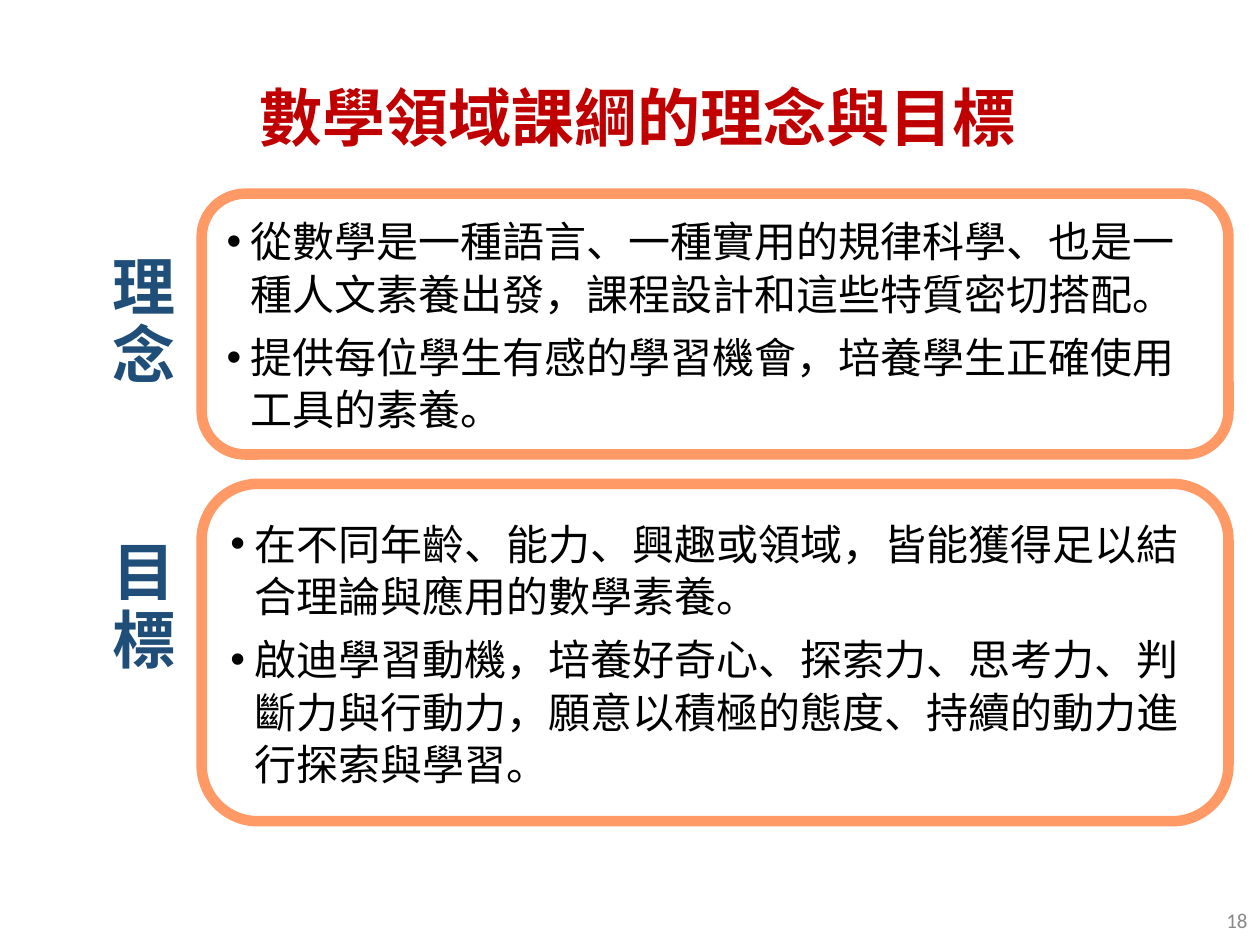
"""Build a slide on the rationale and goals of the mathematics curriculum."""
from dataclasses import dataclass

from lxml import etree
from pptx import Presentation, util as u
from pptx.dml.color import RGBColor
from pptx.enum import shapes, text
from pptx.oxml.ns import qn

WIDTH, HEIGHT = u.Inches(10), u.Inches(7.5)
RED = RGBColor(0xC0, 0x00, 0x00)
NAVY = RGBColor(0x1F, 0x4E, 0x79)
ORANGE = RGBColor(0xFF, 0x99, 0x66)
GREY = RGBColor(0x89, 0x89, 0x89)
BLACK = RGBColor(0, 0, 0)
WHITE = RGBColor(0xFF, 0xFF, 0xFF)
CJK = "Noto Sans CJK SC"
LABEL_X, LABEL_W, LABEL_H = 0.069, 0.091, 0.191
PANEL_X, PANEL_W = 0.16, 0.815


@dataclass
class Section:
    """A label beside a panel, with tops and height as shares of the slide."""
    label: str
    label_top: float
    top: float
    height: float
    points: list[str]


SECTIONS = [
    Section("理念", 0.247, 0.205, 0.276, [
        "從數學是一種語言、一種實用的規律科學、也是一種人文素養出發，課程設計和這些特質密切搭配。",
        "提供每位學生有感的學習機會，培養學生正確使用工具的素養。"]),
    Section("目標", 0.549, 0.512, 0.357, [
        "在不同年齡、能力、興趣或領域，皆能獲得足以結合理論與應用的數學素養。",
        "啟迪學習動機，培養好奇心、探索力、思考力、判斷力與行動力，願意以積極的態度、持續的動力進行探索與學習。"]),
]


def area(x: float, y: float, w: float, h: float) -> tuple[int, int, int, int]:
    """Turn shares of the slide into lengths."""
    return int(x * WIDTH), int(y * HEIGHT), int(w * WIDTH), int(h * HEIGHT)


def style(p, size: float, color: RGBColor, bold: bool = False, name: str = CJK) -> None:
    """Format every run of a paragraph."""
    for r in p.runs:
        r.font.size, r.font.bold, r.font.name = u.Pt(size), bold, name
        r.font.color.rgb = color
        etree.SubElement(r.font._element, qn("a:ea")).set("typeface", name)


def add_bullet(p) -> None:
    """Give a paragraph a hanging round bullet."""
    pPr = p._p.get_or_add_pPr()
    pPr.set("marL", str(u.Inches(0.19)))
    pPr.set("indent", str(-u.Inches(0.19)))
    etree.SubElement(pPr, qn("a:buFont")).set("typeface", "Arial")
    etree.SubElement(pPr, qn("a:buChar")).set("char", "•")


def add_panel(s, section: Section) -> None:
    """Draw an outlined panel with its bullet points."""
    sp = s.shapes.add_shape(shapes.MSO_SHAPE.FLOWCHART_ALTERNATE_PROCESS,
                            *area(PANEL_X, section.top, PANEL_W, section.height))
    sp.shadow.inherit = False
    sp.fill.solid()
    sp.fill.fore_color.rgb = WHITE
    sp.line.color.rgb = ORANGE
    sp.line.width = u.Pt(6)
    tf = sp.text_frame
    tf.word_wrap = True
    tf.vertical_anchor = text.MSO_ANCHOR.MIDDLE
    for i, point in enumerate(section.points):
        p = tf.add_paragraph() if i else tf.paragraphs[0]
        p.text = point
        add_bullet(p)
        p.alignment = text.PP_ALIGN.LEFT
        p.line_spacing = u.Pt(30)
        p.space_before = u.Pt(6 if i else 0)
        style(p, 24, BLACK)


def add_text(s, words: str, box: tuple[int, int, int, int], align: text.PP_ALIGN):
    """Add a wrapped, vertically centred text box and return its frame."""
    tf = s.shapes.add_textbox(*box).text_frame
    tf.word_wrap = True
    tf.vertical_anchor = text.MSO_ANCHOR.MIDDLE
    tf.text = words
    tf.paragraphs[0].alignment = align
    return tf


def add_label(s, section: Section) -> None:
    """Stack the section name beside its panel."""
    tf = add_text(s, section.label, area(LABEL_X, section.label_top, LABEL_W, LABEL_H),
                  text.PP_ALIGN.CENTER)
    tf.margin_left = tf.margin_right = u.Inches(0.15)
    tf.margin_top = tf.margin_bottom = u.Inches(0.07)
    tf.paragraphs[0].line_spacing = 0.9
    style(tf.paragraphs[0], 36, NAVY, True)


def add_title(s, words: str) -> None:
    """Place and format the title placeholder."""
    sp = s.shapes.title
    sp.left, sp.top, sp.width, sp.height = area(0.08, 0.027, 0.852, 0.193)
    tf = sp.text_frame
    tf.text = words
    tf.vertical_anchor = text.MSO_ANCHOR.MIDDLE
    tf.paragraphs[0].alignment = text.PP_ALIGN.CENTER
    style(tf.paragraphs[0], 36, RED, True)


def main() -> None:
    """Build and save the slide."""
    prs = Presentation()
    prs.slide_width, prs.slide_height = WIDTH, HEIGHT
    s = prs.slides.add_slide(prs.slide_layouts[5])
    add_title(s, "數學領域課綱的理念與目標")
    for section in SECTIONS:
        add_panel(s, section)
        add_label(s, section)
    number = add_text(s, "18", area(0.775, 0.947, 0.225, 0.053), text.PP_ALIGN.RIGHT)
    style(number.paragraphs[0], 12, GREY, name="Calibri")
    prs.save("out.pptx")


if __name__ == "__main__":
    main()
